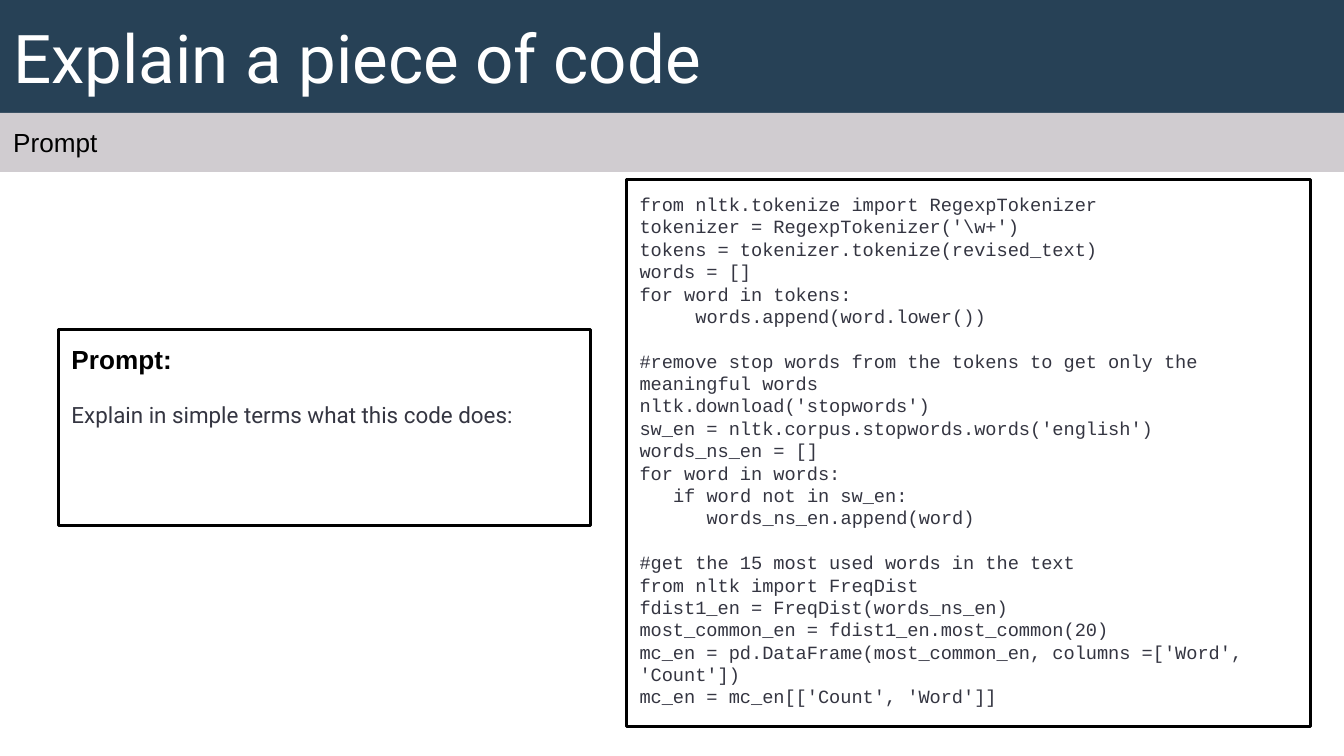
from dataclasses import dataclass
from typing import Optional

from pptx import Presentation
from pptx.dml.color import RGBColor as Rgb
from pptx.enum.shapes import MSO_SHAPE as Form
from pptx.enum.text import MSO_ANCHOR as Anchor, PP_ALIGN as Align
from pptx.util import Inches, Pt


@dataclass(frozen=True)
class Style:
    font: str
    size: int
    color: str
    bold: bool = False
    pitch: Optional[int] = None


@dataclass(frozen=True)
class Theme:
    navy: str = "274156"
    gray: str = "D0CCD0"
    edge: str = "000000"
    title: Style = Style("Roboto", 36, "FFFFFF")
    label: Style = Style("Arial", 14, "000000")
    head: Style = Style("Arial", 14, "000000", bold=True)
    body: Style = Style("Roboto", 12, "343541")
    code: Style = Style("Courier New", 10, "343541", pitch=12)


@dataclass(frozen=True)
class Line:
    text: str
    style: Style
    gap: int = 0
    indent: int = 0


@dataclass(frozen=True)
class Box:
    col: float
    row: float
    cols: float
    rows: float
    lines: list[Line]
    fill: Optional[str] = None
    anchor: Anchor = Anchor.TOP


THEME = Theme()
CELL = Inches(0.1)
COLS, ROWS = 100, 56.25
BANNER, STRIP = 8.4, 4.4
CODE = r"""from nltk.tokenize import RegexpTokenizer
tokenizer = RegexpTokenizer('\w+')
tokens = tokenizer.tokenize(revised_text)
words = []
for word in tokens:
     words.append(word.lower())

#remove stop words from the tokens to get only the meaningful words
nltk.download('stopwords')
sw_en = nltk.corpus.stopwords.words('english')
words_ns_en = []
for word in words:
   if word not in sw_en:
      words_ns_en.append(word)

#get the 15 most used words in the text
from nltk import FreqDist
fdist1_en = FreqDist(words_ns_en)
most_common_en = fdist1_en.most_common(20)
mc_en = pd.DataFrame(most_common_en, columns =['Word', 'Count'])
mc_en = mc_en[['Count', 'Word']]"""


def listing(code: str, style: Style) -> list[Line]:
    """Turn code into lines, with blank rows as gaps and leading spaces as indents."""
    lines = []
    for part, block in enumerate(code.split("\n\n")):
        for rank, row in enumerate(block.split("\n")):
            text = row.lstrip()
            gap = style.pitch if part and not rank else 0
            lines.append(Line(text, style, gap, len(row) - len(text)))
    return lines


def write(para, line: Line) -> None:
    """Fill one paragraph and format its runs."""
    style = line.style
    para.text = line.text
    para.alignment = Align.LEFT
    para.space_before = Pt(line.gap)
    if style.pitch:
        para.line_spacing = Pt(style.pitch)
    if line.indent:
        para._p.get_or_add_pPr().set("marL", str(Pt(line.indent * style.size * 0.6)))
    for run in para.runs:
        font = run.font
        font.name, font.size, font.bold = style.font, Pt(style.size), style.bold
        font.color.rgb = Rgb.from_string(style.color)


def draw(slide, box: Box) -> None:
    """Draw a filled band or an outlined panel with its text."""
    spot = [round(n * CELL) for n in (box.col, box.row, box.cols, box.rows)]
    shape = slide.shapes.add_shape(Form.RECTANGLE, *spot)
    shape.shadow.inherit = False
    if box.fill:
        shape.fill.solid()
        shape.fill.fore_color.rgb = Rgb.from_string(box.fill)
        shape.line.fill.background()
    else:
        shape.fill.background()
        shape.line.color.rgb = Rgb.from_string(THEME.edge)
        shape.line.width = Pt(1.5)
    frame = shape.text_frame
    frame.word_wrap = True
    frame.vertical_anchor = box.anchor
    frame.margin_left = frame.margin_right = CELL
    frame.margin_top = frame.margin_bottom = CELL
    for rank, line in enumerate(box.lines):
        write(frame.add_paragraph() if rank else frame.paragraphs[0], line)


def main() -> None:
    """Build the slide and save it."""
    deck = Presentation()
    deck.slide_width, deck.slide_height = COLS * CELL, round(ROWS * CELL)
    slide = deck.slides.add_slide(deck.slide_layouts[6])
    title = [Line("Explain a piece of code", THEME.title)]
    label = [Line("Prompt", THEME.label)]
    ask = [
        Line("Prompt:", THEME.head),
        Line("Explain in simple terms what this code does:", THEME.body, gap=14),
    ]
    boxes = [
        Box(0, 0, COLS, BANNER, title, THEME.navy, Anchor.MIDDLE),
        Box(0, BANNER, COLS, STRIP, label, THEME.gray),
        Box(4.34, 24.54, 39.6, 14.6, ask),
        Box(46.6, 13.36, 50.9, 40.7, listing(CODE, THEME.code)),
    ]
    for box in boxes:
        draw(slide, box)
    deck.save("out.pptx")


if __name__ == "__main__":
    main()
